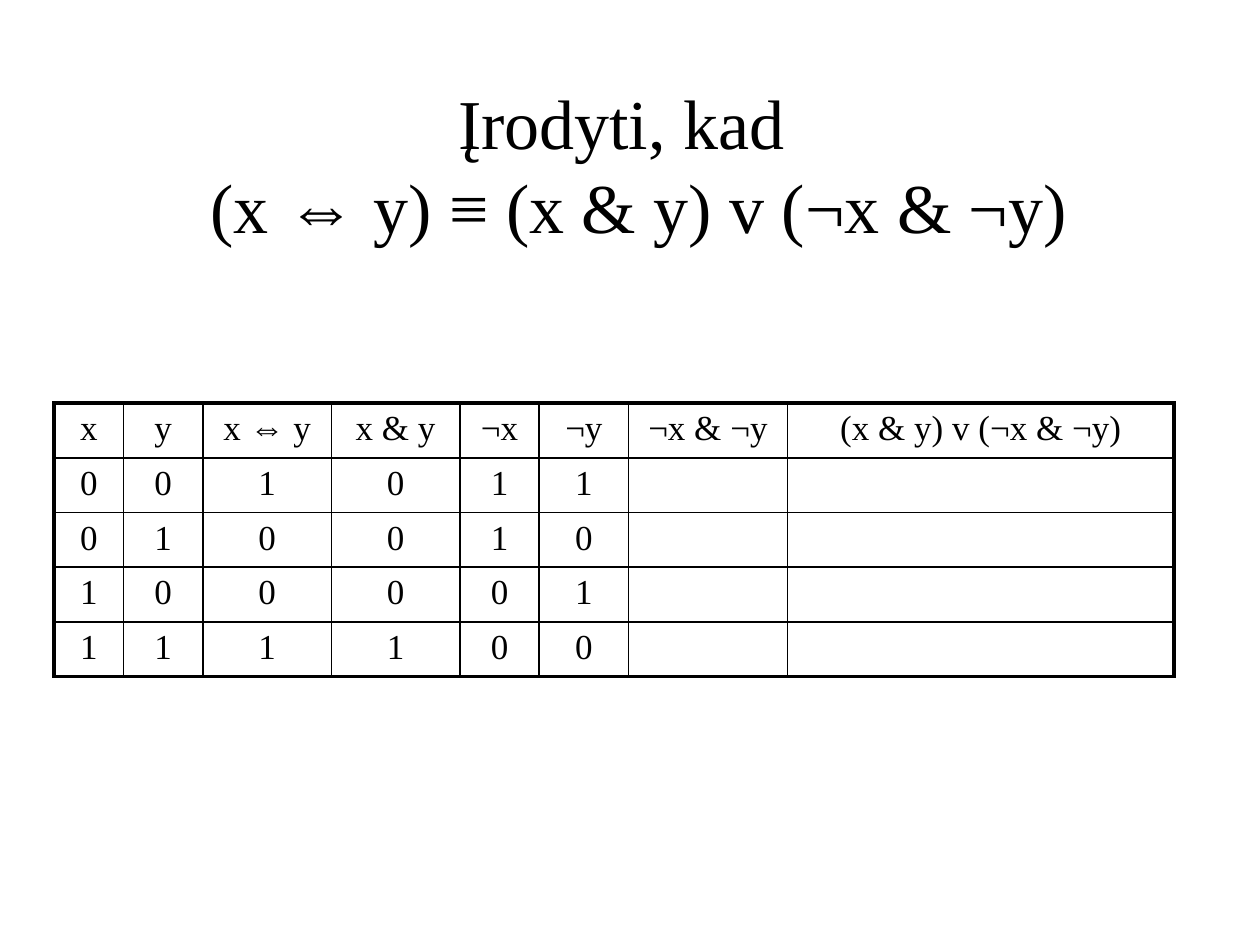
from dataclasses import dataclass

from lxml import etree
from pptx import Presentation
from pptx.dml.color import RGBColor
from pptx.enum.text import MSO_ANCHOR, PP_ALIGN
from pptx.oxml.ns import qn
from pptx.util import Inches, Pt

CENTER = PP_ALIGN.CENTER
MIDDLE = MSO_ANCHOR.MIDDLE
BLACK = RGBColor(0, 0, 0)
FONT = "Times New Roman"
BLANK_LAYOUT = 6
PAGE_WIDTH, PAGE_HEIGHT = Inches(10), Inches(7.5)
THIN, THICK = Pt(1), Pt(2.25)


@dataclass(frozen=True)
class Area:
    """A rectangle in shares of the page."""
    left: float
    top: float
    width: float
    height: float

    def lengths(self) -> tuple[int, int, int, int]:
        return (round(self.left * PAGE_WIDTH), round(self.top * PAGE_HEIGHT),
                round(self.width * PAGE_WIDTH), round(self.height * PAGE_HEIGHT))


@dataclass(frozen=True)
class Column:
    """A truth table column: heading, width in inches and one value per row."""
    heading: str
    width: float
    values: str


TITLE_AREA = Area(0.075, 0.09, 0.85, 0.165)
TABLE_LEFT, TABLE_TOP, ROW_HEIGHT = Inches(0.43), Inches(3.2), Inches(0.41)
TITLE_LINES = ("Įrodyti, kad ", " (x ⇔ y) ≡ (x & y) v (¬x & ¬y)")
COLUMNS = (
    Column("x", 0.55, "0011"),
    Column("y", 0.63, "0101"),
    Column("x ⇔ y", 1.02, "1001"),
    Column("x & y", 1.02, "0001"),
    Column("¬x", 0.63, "1100"),
    Column("¬y", 0.71, "1010"),
    Column("¬x & ¬y", 1.26, ""),
    Column("(x & y) v (¬x & ¬y)", 3.07, ""),
)
ROW_COUNT = 5


def add_span(para, text: str, size: int) -> None:
    span = para.add_run()
    span.text = text
    span.font.name = FONT
    span.font.size = Pt(size)
    span.font.color.rgb = BLACK


def add_title(page) -> None:
    box = page.shapes.add_textbox(*TITLE_AREA.lengths())
    frame = box.text_frame
    frame.word_wrap = True
    frame.vertical_anchor = MIDDLE
    para = frame.paragraphs[0]
    para.alignment = CENTER
    for index, line in enumerate(TITLE_LINES):
        if index:
            para.add_line_break()
        add_span(para, line, 40)


def set_borders(cell, widths: dict[str, int]) -> None:
    """Put border lines ahead of the fill, as the schema asks."""
    properties = cell._tc.get_or_add_tcPr()
    for index, (side, width) in enumerate(widths.items()):
        line = etree.Element(qn(f"a:ln{side}"), w=str(width))
        fill = etree.SubElement(line, qn("a:solidFill"))
        etree.SubElement(fill, qn("a:srgbClr"), val=str(BLACK))
        properties.insert(index, line)


def fill_cell(cell, text: str) -> None:
    cell.fill.background()
    para = cell.text_frame.paragraphs[0]
    para.alignment = CENTER
    para.font.size = Pt(20)
    # Space before as a share of the line height
    space = etree.SubElement(para._p.get_or_add_pPr(), qn("a:spcBef"))
    etree.SubElement(space, qn("a:spcPct"), val="20000")
    para._p.pPr.insert(0, space)
    if text:
        add_span(para, text, 20)


def add_truth_table(page) -> None:
    width = Inches(sum(column.width for column in COLUMNS))
    table = page.shapes.add_table(ROW_COUNT, len(COLUMNS), TABLE_LEFT, TABLE_TOP,
                                  width, ROW_HEIGHT * ROW_COUNT).table
    table.first_row = table.horz_banding = False
    for row in table.rows:
        row.height = ROW_HEIGHT
    last_row, last_column = ROW_COUNT - 1, len(COLUMNS) - 1
    for c, column in enumerate(COLUMNS):
        table.columns[c].width = Inches(column.width)
        texts = [column.heading, *column.values.ljust(last_row)]
        for r, text in enumerate(texts):
            cell = table.cell(r, c)
            fill_cell(cell, text.strip())
            # Thick outer frame, thin inner grid
            set_borders(cell, {
                "L": THICK if c == 0 else THIN,
                "R": THICK if c == last_column else THIN,
                "T": THICK if r == 0 else THIN,
                "B": THICK if r == last_row else THIN,
            })


def main() -> None:
    deck = Presentation()
    deck.slide_width, deck.slide_height = PAGE_WIDTH, PAGE_HEIGHT
    page = deck.slides.add_slide(deck.slide_layouts[BLANK_LAYOUT])
    add_title(page)
    add_truth_table(page)
    deck.save("out.pptx")


if __name__ == "__main__":
    main()
